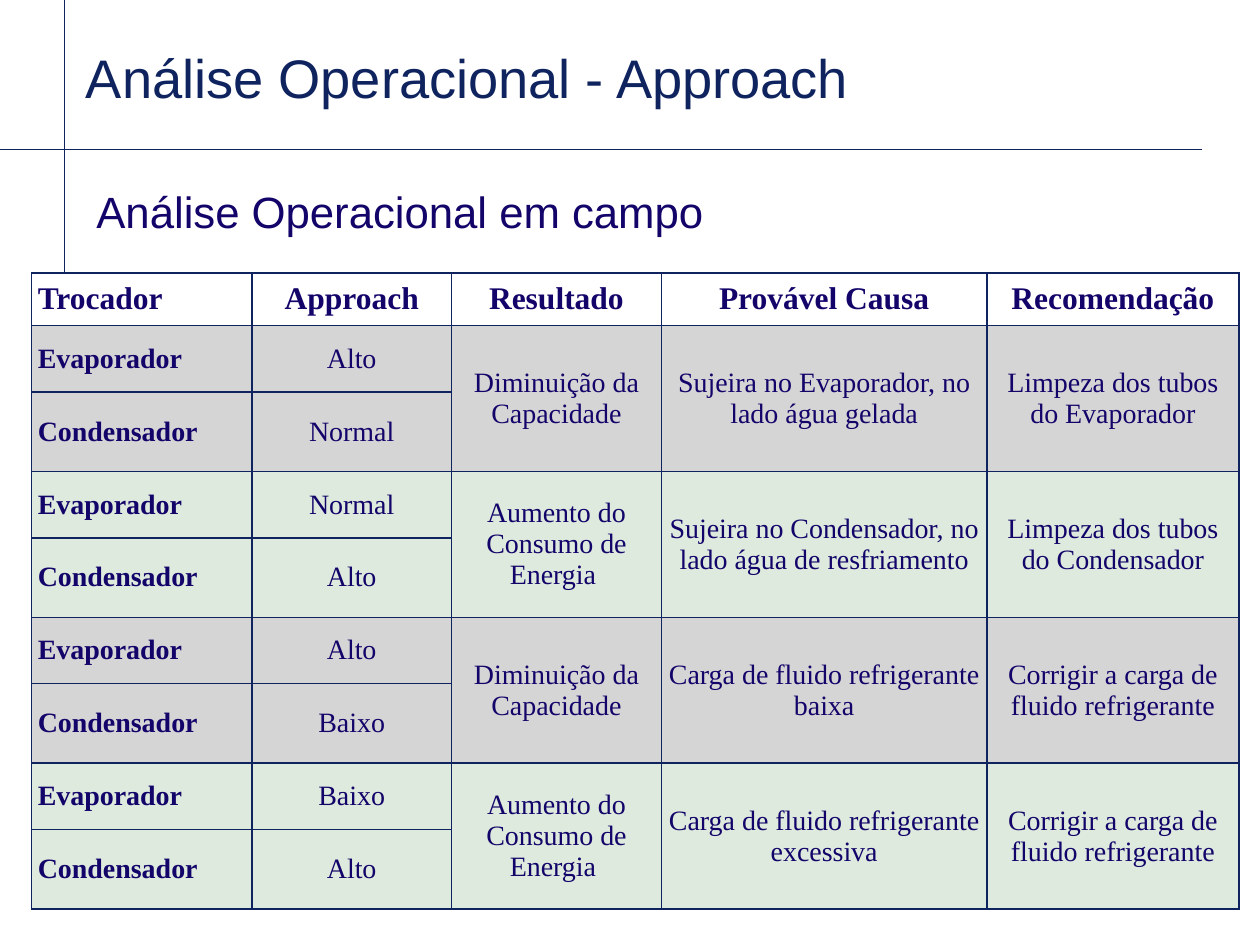
from pptx import Presentation
from pptx.dml.color import RGBColor
from pptx.enum.shapes import MSO_CONNECTOR
from pptx.enum.text import MSO_ANCHOR as ANCHOR, PP_ALIGN as ALIGN
from pptx.oxml.ns import qn
from pptx.util import Pt
from lxml.etree import SubElement

NAVY, INDIGO = "0F245F", "13046A"
WHITE, GREY, GREEN = "FFFFFF", "D5D5D5", "DDEADD"

HEADERS = ["Trocador", "Approach", "Resultado", "Provável Causa", "Recomendação"]
CASES = [
    ("Alto", "Normal", "Diminuição da Capacidade",
     "Sujeira no Evaporador, no lado água gelada",
     "Limpeza dos tubos do Evaporador"),
    ("Normal", "Alto", "Aumento do Consumo de Energia ",
     "Sujeira no Condensador, no lado água de resfriamento",
     "Limpeza dos tubos do Condensador"),
    ("Alto", "Baixo", "Diminuição da Capacidade",
     "Carga de fluido refrigerante baixa",
     "Corrigir a carga de fluido refrigerante"),
    ("Baixo", "Alto", "Aumento do Consumo de Energia ",
     "Carga de fluido refrigerante excessiva",
     "Corrigir a carga de fluido refrigerante"),
]
COL_WIDTHS = [126, 114, 120, 186, 144]
HEADER_HEIGHT = 30
CASE_HEIGHTS = [38, 45.4]


def color(value):
    return RGBColor.from_string(value)


def write(tf, text, size, font="Arial", fill=INDIGO, bold=False,
          align=ALIGN.LEFT, spacing=None):
    p = tf.paragraphs[0]
    p.alignment = align
    if spacing:
        p.line_spacing = spacing
    r = p.add_run()
    r.text = text
    r.font.name = font
    r.font.size = Pt(size)
    r.font.bold = bold
    r.font.color.rgb = color(fill)


def add_text(s, box, text, size, anchor=ANCHOR.TOP, **fmt):
    tf = s.shapes.add_textbox(*map(Pt, box)).text_frame
    tf.word_wrap = True
    tf.vertical_anchor = anchor
    write(tf, text, size, **fmt)


def add_rule(s, x1, y1, x2, y2):
    line = s.shapes.add_connector(MSO_CONNECTOR.STRAIGHT, *map(Pt, (x1, y1, x2, y2)))
    line.line.color.rgb = color(NAVY)
    line.line.width = Pt(0.75)
    SubElement(line._element.spPr, qn("a:effectLst"))


def add_frame(s, left, top, width, height):
    add_rule(s, left + 37, top + height, left + 37, top)
    add_rule(s, left, top + 85.5, left + width, top + 85.5)


def style_cell(cell, fill):
    tcPr = cell._tc.get_or_add_tcPr()
    for side in ("lnL", "lnR", "lnT", "lnB"):
        ln = SubElement(tcPr, qn(f"a:{side}"), w=str(Pt(1)))
        SubElement(SubElement(ln, qn("a:solidFill")), qn("a:srgbClr"), val=NAVY)
    cell.fill.solid()
    cell.fill.fore_color.rgb = color(fill)
    cell.vertical_anchor = ANCHOR.MIDDLE
    cell.margin_left = cell.margin_right = Pt(3.6)
    cell.margin_top = cell.margin_bottom = 0


def add_diagnosis_table(s, left, top):
    heights = [HEADER_HEIGHT] + CASE_HEIGHTS * len(CASES)
    box = (left, top, sum(COL_WIDTHS), sum(heights))
    table = s.shapes.add_table(len(heights), len(COL_WIDTHS), *map(Pt, box)).table
    table.first_row = table.horz_banding = False
    for column, width in zip(table.columns, COL_WIDTHS):
        column.width = Pt(width)
    for row, height in zip(table.rows, heights):
        row.height = Pt(height)

    rows = [HEADERS]
    for evaporator, condenser, *findings in CASES:
        rows.append(["Evaporador", evaporator, *findings])
        rows.append(["Condensador", condenser])
    for i, texts in enumerate(rows):
        fill = WHITE if i == 0 else (GREY, GREEN)[(i - 1) // 2 % 2]
        for j in range(len(COL_WIDTHS)):
            style_cell(table.cell(i, j), fill)
        for j, text in enumerate(texts):
            cell = table.cell(i, j)
            if i % 2 and j > 1:
                cell.merge(table.cell(i + 1, j))
            write(cell.text_frame, text, 16 if i else 18, font="Times New Roman",
                  bold=i == 0 or j == 0, align=ALIGN.CENTER if j else ALIGN.LEFT)


def main():
    prs = Presentation()
    prs.slide_width, prs.slide_height = Pt(720), Pt(540)
    s = prs.slides.add_slide(prs.slide_layouts[6])
    add_frame(s, 0, 0, 687, 477)
    add_text(s, (42, 18, 564, 48), "Análise Operacional - Approach", 31,
             anchor=ANCHOR.BOTTOM, fill=NAVY, spacing=0.85)
    add_diagnosis_table(s, 18, 156)
    add_text(s, (48, 102, 654, 48), "Análise Operacional em campo", 25,
             align=ALIGN.JUSTIFY)
    prs.save("out.pptx")


if __name__ == "__main__":
    main()
